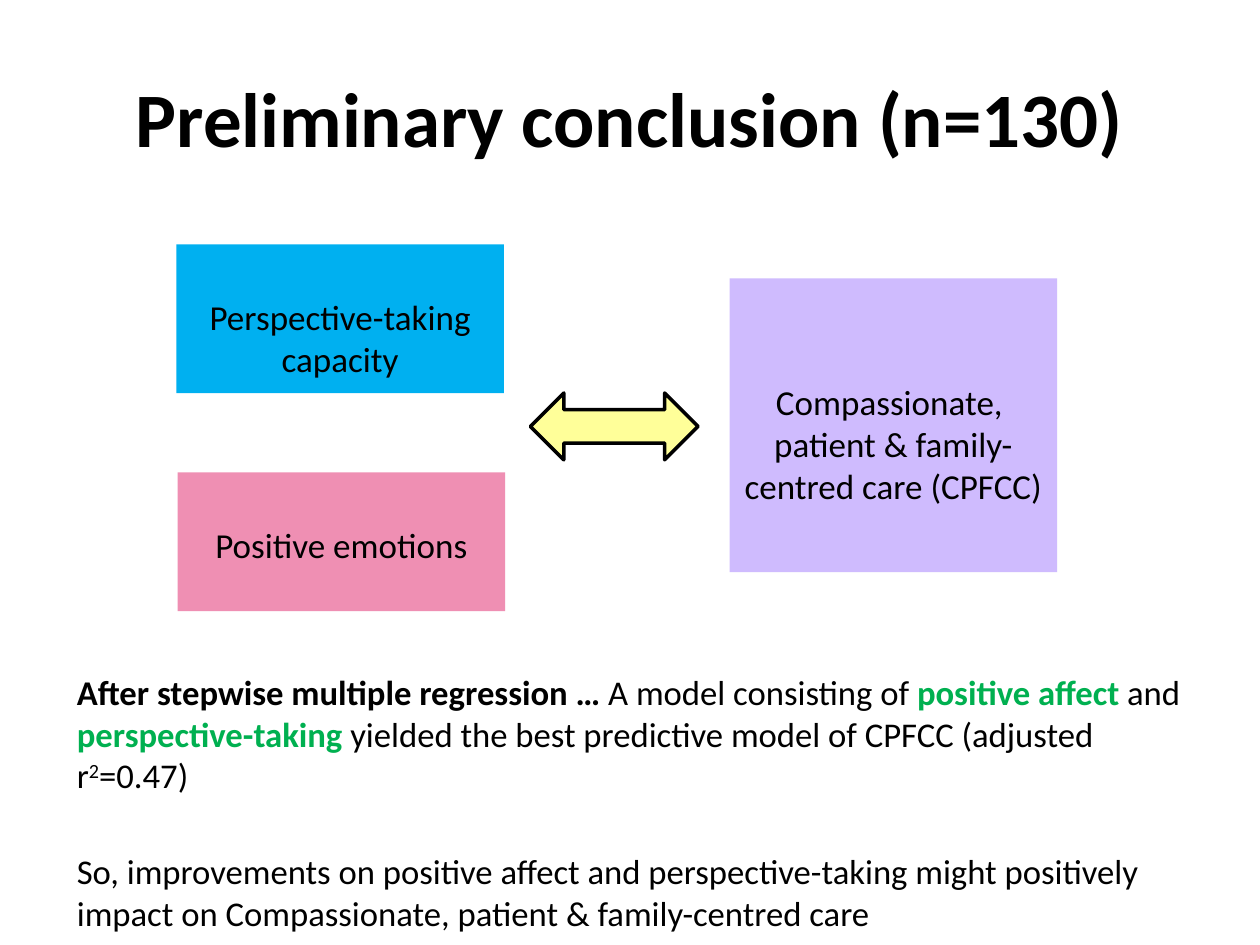
from lxml import etree
from pptx import Presentation
from pptx.dml.color import RGBColor
from pptx.enum.shapes import MSO_SHAPE
from pptx.enum.text import MSO_ANCHOR, MSO_AUTO_SIZE, PP_ALIGN
from pptx.oxml.ns import qn
from pptx.util import Pt

RECT, ARROW = MSO_SHAPE.RECTANGLE, MSO_SHAPE.LEFT_RIGHT_ARROW
TOP, MIDDLE = MSO_ANCHOR.TOP, MSO_ANCHOR.MIDDLE
CENTER, LEFT = PP_ALIGN.CENTER, PP_ALIGN.LEFT
FIXED = MSO_AUTO_SIZE.NONE

# Content
TITLE = "Preliminary conclusion (n=130)"
# Each run: text, style
BODY = [
    [("After stepwise multiple regression … ", "bold"),
     ("A model consisting of ", "plain"),
     ("positive affect ", "key"),
     ("and ", "plain"),
     ("perspective-taking ", "key"),
     ("yielded the best predictive model of CPFCC (adjusted r", "plain"),
     ("2", "super"),
     ("=0.47)", "plain")],
    [("So, improvements on positive affect and perspective-taking might "
      "positively impact on Compassionate, patient & family-centred care",
      "plain")],
]
# Each box: lines, fill, left, top, height, space above the text
BOXES = [
    (["Perspective-taking capacity"], "blue", 100.8, 139.7, 85, 29.3),
    (["Positive emotions"], "pink", 101.5, 270, 79.2, 29.3),
    (["Compassionate, ", "patient & family-centred care (CPFCC)"],
     "violet", 416.9, 159.1, 167.8, 58.6),
]
BOX_WIDTH = 187.2

THEME = {
    "font": "Calibri",
    "size": {"title": 44, "body": 19.8, "box": 20},
    "color": {"text": "000000", "key": "00B050", "blue": "00B0F0",
              "pink": "EF8FB3", "violet": "CFBBFE", "arrow": "FFFF99"},
}


def color(name):
    return RGBColor.from_string(THEME["color"][name])


def set_font(para, role, align):
    para.alignment = align
    para.font.name = THEME["font"]
    para.font.size = Pt(THEME["size"][role])
    para.font.color.rgb = color("text")


def place(shape, left, top, width, height):
    shape.left, shape.top = Pt(left), Pt(top)
    shape.width, shape.height = Pt(width), Pt(height)


def add_part(slide, kind, fill, *frame):
    part = slide.shapes.add_shape(kind, *map(Pt, frame))
    part.shadow.inherit = False
    part.fill.solid()
    part.fill.fore_color.rgb = color(fill)
    return part


def add_title(slide):
    title = slide.shapes.title
    place(title, 36, 21.6, 648, 90)
    title.text_frame.text = TITLE
    title.text_frame.vertical_anchor = MIDDLE
    para = title.text_frame.paragraphs[0]
    set_font(para, "title", CENTER)
    para.font.bold = True


def add_body(slide):
    body = slide.placeholders[1]
    place(body, 36.7, 303.8, 648, 200.9)
    frame = body.text_frame
    frame.auto_size, frame.vertical_anchor = FIXED, TOP
    frame.margin_top = Pt(79.5)  # starts below the boxes
    for i, runs in enumerate(BODY):
        para = frame.add_paragraph() if i else frame.paragraphs[0]
        set_font(para, "body", LEFT)
        para.space_before = Pt(31.2 if i else 0)
        props = para._p.get_or_add_pPr()
        props.set("marL", "0")
        props.set("indent", "0")
        props.insert_element_before(
            etree.Element(qn("a:buNone")), "a:tabLst", "a:defRPr", "a:extLst")
        for text, style in runs:
            run = para.add_run()
            run.text = text
            if style in ("bold", "key"):
                run.font.bold = True
            if style == "key":
                run.font.color.rgb = color("key")
            if style == "super":
                run._r.get_or_add_rPr().set("baseline", "30000")


def add_box(slide, lines, fill, left, top, height, gap):
    box = add_part(slide, RECT, fill, left, top, BOX_WIDTH, height)
    box.line.fill.background()
    frame = box.text_frame
    frame.word_wrap, frame.vertical_anchor = True, TOP
    frame.margin_left = frame.margin_right = frame.margin_bottom = 0
    frame.margin_top = Pt(gap)
    frame.text = "\n".join(lines)
    for para in frame.paragraphs:
        set_font(para, "box", CENTER)


def main():
    deck = Presentation()
    deck.slide_width, deck.slide_height = Pt(720), Pt(540)
    slide = deck.slides.add_slide(deck.slide_layouts[1])
    add_title(slide)
    add_body(slide)
    for box in BOXES:
        add_box(slide, *box)
    # Two-way link between the boxes
    arrow = add_part(slide, ARROW, "arrow", 303.1, 224.6, 95.8, 38.2)
    arrow.line.color.rgb = color("text")
    arrow.line.width = Pt(2)
    deck.save("out.pptx")


if __name__ == "__main__":
    main()
